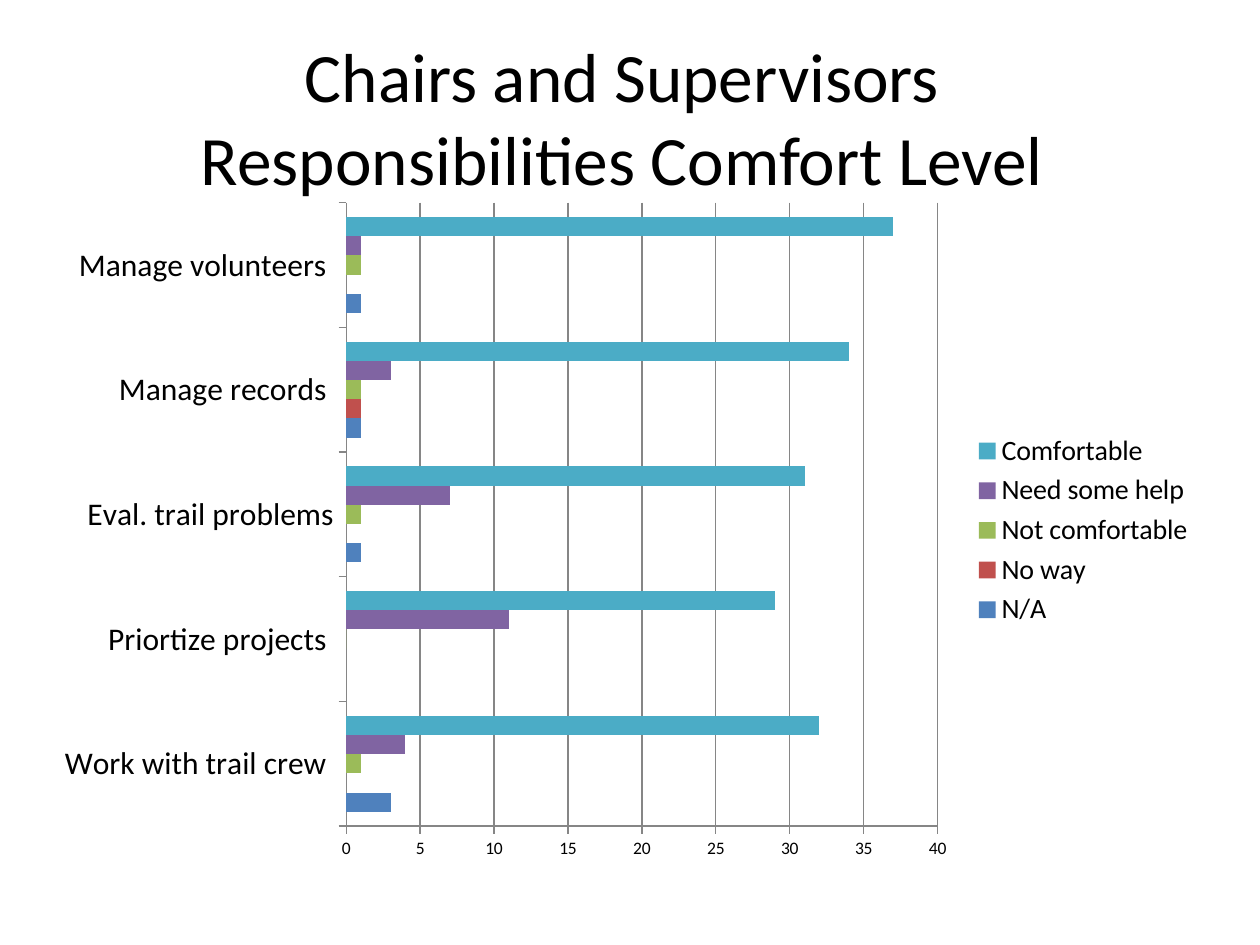
from pptx import Presentation
from pptx.chart.data import CategoryChartData
from pptx.dml.color import RGBColor
from pptx.enum.chart import XL_CHART_TYPE, XL_LEGEND_POSITION, XL_TICK_MARK
from pptx.enum.text import MSO_ANCHOR, PP_ALIGN
from pptx.util import Inches, Pt


def color(hex_code):
    return RGBColor.from_string(hex_code)


def format_font(font, size, hex_code="000000", name="Calibri"):
    font.size = Pt(size)
    font.name = name
    font.color.rgb = color(hex_code)


presentation = Presentation()
presentation.slide_width = width = Inches(10)
presentation.slide_height = height = Inches(7.5)
slide = presentation.slides.add_slide(presentation.slide_layouts[5])

# Title
title = slide.shapes.title
title.left, title.top = int(width * 0.05), int(height * 0.04)
title.width, title.height = int(width * 0.9), Inches(1.25)
title.text_frame.vertical_anchor = MSO_ANCHOR.MIDDLE
paragraph = title.text_frame.paragraphs[0]
paragraph.text = "Chairs and Supervisors \vResponsibilities Comfort Level "
paragraph.alignment = PP_ALIGN.CENTER
format_font(paragraph.font, 39.6)

# Survey answers: one series per comfort level
comfort_levels = [
    ("N/A", "4F81BD", (3, None, 1, 1, 1)),
    ("No way", "C0504D", (None, None, None, 1, None)),
    ("Not comfortable", "9BBB59", (1, 0, 1, 1, 1)),
    ("Need some help", "8064A2", (4, 11, 7, 3, 1)),
    ("Comfortable", "4BACC6", (32, 29, 31, 34, 37)),
]
chart_data = CategoryChartData()
chart_data.categories = ["Work with trail crew ", "Priortize projects ", "Eval. trail problems",
                         "Manage records ", "Manage volunteers "]
for name, _, values in comfort_levels:
    chart_data.add_series(name, values)

# Bar chart
chart = slide.shapes.add_chart(
    XL_CHART_TYPE.BAR_CLUSTERED, int(width * 0.033), int(height * 0.2),
    int(width * 0.925), Inches(5.42), chart_data).chart
chart.has_title = False
format_font(chart.font, 10)
plot = chart.plots[0]
plot.vary_by_categories = False
plot.gap_width = 150
for series, (_, hex_code, _) in zip(plot.series, comfort_levels):
    series.format.fill.solid()
    series.format.fill.fore_color.rgb = color(hex_code)

# Axes and gridlines
for axis, size in ((chart.category_axis, 18), (chart.value_axis, 10)):
    axis.major_tick_mark = XL_TICK_MARK.OUTSIDE
    axis.format.line.color.rgb = color("868686")
    axis.format.line.width = Pt(0.75)
    format_font(axis.tick_labels.font, size)
value_axis = chart.value_axis
value_axis.minimum_scale, value_axis.maximum_scale, value_axis.major_unit = 0, 40, 5
value_axis.has_major_gridlines = True
value_axis.major_gridlines.format.line.color.rgb = color("868686")
value_axis.major_gridlines.format.line.width = Pt(0.75)

# Legend
chart.has_legend = True
chart.legend.position = XL_LEGEND_POSITION.RIGHT
chart.legend.include_in_layout = False
format_font(chart.legend.font, 16)

presentation.save("out.pptx")
